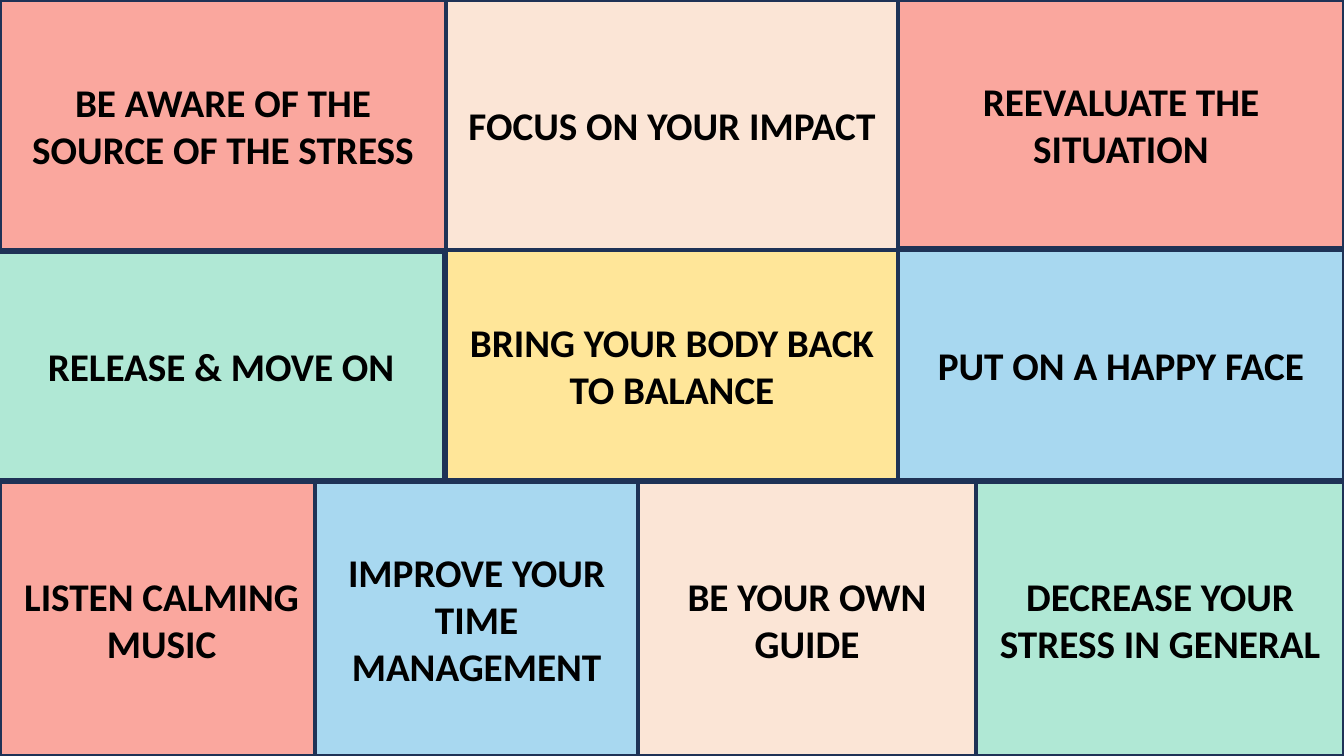
from dataclasses import dataclass

from pptx import Presentation, util as u
from pptx.dml.color import RGBColor
from pptx.enum import shapes, text

WIDTH, HEIGHT = 1344, 756

ROWS = [
    [
        ("BE AWARE OF THE SOURCE OF THE STRESS", "coral", 0, 0, 446, 250),
        ("FOCUS ON YOUR IMPACT", "cream", 446, 0, 898, 250),
        ("REEVALUATE THE SITUATION", "coral", 898, 0, WIDTH, 248),
    ],
    [
        ("RELEASE & MOVE ON", "mint", -2, 252, 444, 480),
        ("BRING YOUR BODY BACK TO BALANCE", "yellow", 446, 250, 898, 480),
        ("PUT ON A HAPPY FACE", "sky", 898, 250, WIDTH, 480),
    ],
    [
        ("LISTEN CALMING MUSIC", "coral", 0, 482, 323, HEIGHT),
        ("IMPROVE YOUR TIME MANAGEMENT", "sky", 315, 482, 638, HEIGHT),
        ("BE YOUR OWN GUIDE", "cream", 638, 482, 976, HEIGHT),
        ("DECREASE YOUR STRESS IN GENERAL", "mint", 976, 482, WIDTH, HEIGHT),
    ],
]


@dataclass(frozen=True)
class Theme:
    coral: str = "FAA79E"
    cream: str = "FBE5D6"
    mint: str = "B0E8D5"
    yellow: str = "FFE699"
    sky: str = "A8D8F0"
    border: str = "1E3256"
    ink: str = "000000"
    font: str = "Calibri"
    size: int = 28
    border_width: int = 3


THEME = Theme()


def px(n):
    return u.Emu(round(n * 914400 / 100.8))


def rgb(name):
    return RGBColor.from_string(getattr(THEME, name))


def add_tile(slide, label, fill, left, top, right, bottom):
    sp = slide.shapes.add_shape(
        shapes.MSO_SHAPE.RECTANGLE,
        px(left), px(top), px(right - left), px(bottom - top),
    )
    sp.shadow.inherit = False
    sp.fill.solid()
    sp.fill.fore_color.rgb = rgb(fill)
    sp.line.color.rgb = rgb("border")
    sp.line.width = u.Pt(THEME.border_width)
    tf = sp.text_frame
    tf.word_wrap = True
    tf.vertical_anchor = text.MSO_ANCHOR.MIDDLE
    tf.text = label
    p = tf.paragraphs[0]
    p.alignment = text.PP_ALIGN.CENTER
    r = p.runs[0]
    r.font.name = THEME.font
    r.font.size = u.Pt(THEME.size)
    r.font.bold = True
    r.font.color.rgb = rgb("ink")


def main():
    prs = Presentation()
    prs.slide_width, prs.slide_height = px(WIDTH), px(HEIGHT)
    slide = prs.slides.add_slide(prs.slide_layouts[6])
    for row in ROWS:
        for tile in row:
            add_tile(slide, *tile)
    prs.save("out.pptx")


if __name__ == "__main__":
    main()
